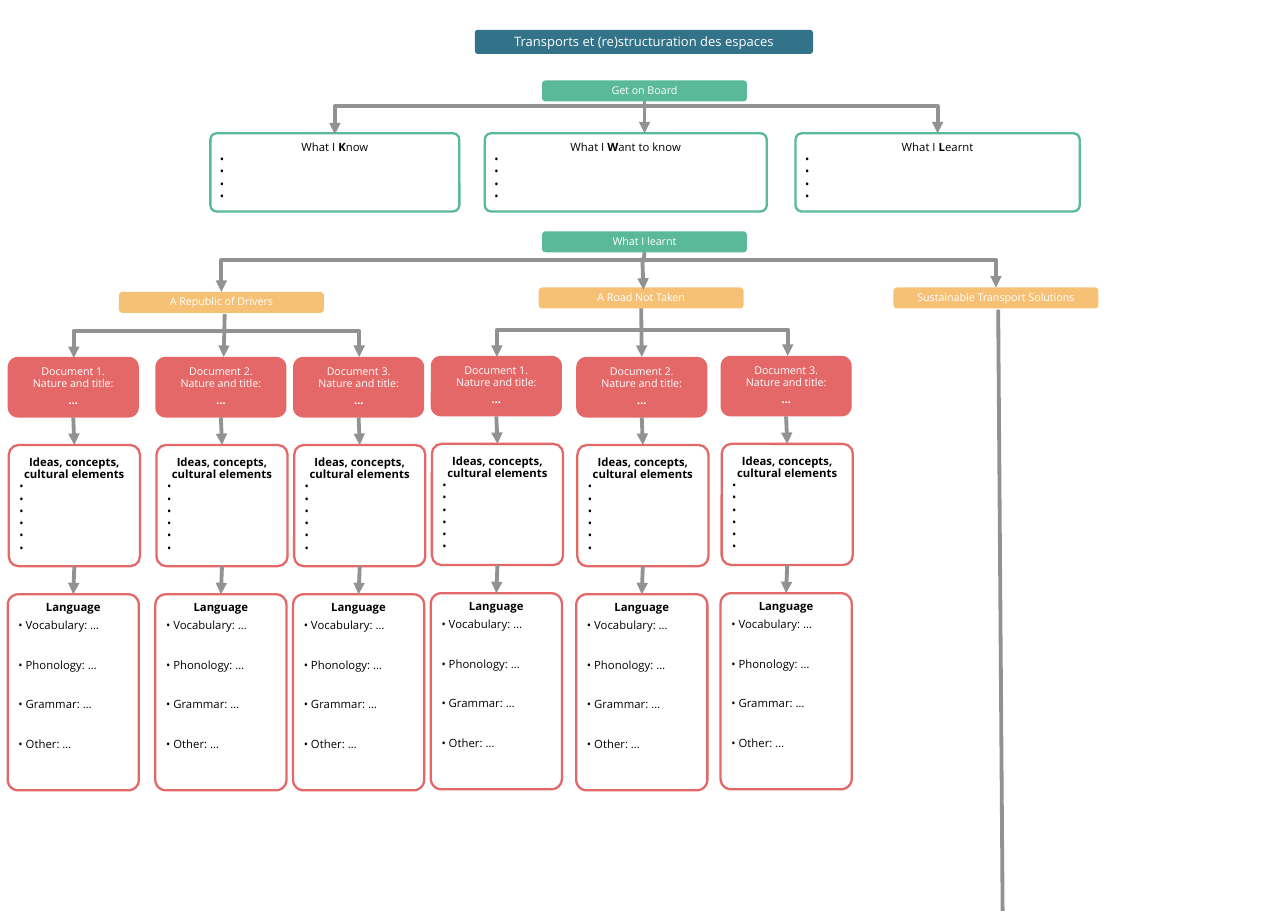
import lxml.etree
import pptx
import pptx.util
import pptx.dml.color
import pptx.enum.shapes
import pptx.enum.text
import pptx.oxml.ns

RGBColor = pptx.dml.color.RGBColor
BLUE = RGBColor(0x33, 0x73, 0x89)
GREEN = RGBColor(0x59, 0xB9, 0x98)
ORANGE = RGBColor(0xF7, 0xC1, 0x75)
RED = RGBColor(0xE4, 0x68, 0x68)
GREY = RGBColor(0x92, 0x92, 0x92)
WHITE = RGBColor(0xFF, 0xFF, 0xFF)
BLACK = RGBColor(0, 0, 0)

CENTER = pptx.enum.text.PP_ALIGN.CENTER
LEFT = pptx.enum.text.PP_ALIGN.LEFT
STRAIGHT = pptx.enum.shapes.MSO_CONNECTOR.STRAIGHT
ELBOW = pptx.enum.shapes.MSO_CONNECTOR.ELBOW
qn = pptx.oxml.ns.qn
SubElement = lxml.etree.SubElement

# The slide is a grid of 1169 columns by 827 rows
CELL = pptx.util.Inches(0.01)
TOP, BOTTOM = 0, 2

prs = pptx.Presentation()
prs.slide_width, prs.slide_height = 1169 * CELL, 827 * CELL
s = prs.slides.add_slide(prs.slide_layouts[6])


def box(x, y, w, h, fill=None, line=None, adj=None):
    sp = s.shapes.add_shape(pptx.enum.shapes.MSO_SHAPE.ROUNDED_RECTANGLE,
                            x * CELL, y * CELL, w * CELL, h * CELL)
    sp.shadow.inherit = False
    if adj:
        sp.adjustments[0] = adj
    if fill:
        sp.fill.solid()
        sp.fill.fore_color.rgb = fill
    else:
        sp.fill.background()
    if line:
        sp.line.color.rgb = line
        sp.line.width = pptx.util.Pt(1.5)
    else:
        sp.line.fill.background()
    tf = sp.text_frame
    tf.word_wrap = True
    tf.vertical_anchor = pptx.enum.text.MSO_ANCHOR.MIDDLE
    tf.margin_left = tf.margin_right = 7 * CELL
    tf.margin_top = tf.margin_bottom = 3 * CELL
    return sp


def write(sp, *parts, size=7.4, font="Open Sans", color=BLACK, align=LEFT,
          bold=None, before=0):
    """Add one paragraph; a line break follows each part but the last
    when it ends with a newline, and the part equal to bold is bold."""
    tf = sp.text_frame
    p = tf.paragraphs[0] if not tf.text else tf.add_paragraph()
    p.alignment = align
    p.line_spacing = 0.9
    p.space_before = pptx.util.Pt(before)
    for part in parts:
        r = p.add_run()
        r.text = part.rstrip("\n")
        r.font.size = pptx.util.Pt(size)
        r.font.name = font
        r.font.color.rgb = color
        r.font.bold = part == bold
        if part.endswith("\n"):
            p.add_line_break()
            SubElement(p._p[-1], qn("a:rPr"), sz=str(int(size * 100)))


# Title and headings
bars = {}
for text, x, y, w, h, size, fill, adj in [
    ("Transports et (re)structuration des espaces", 431, 27, 307, 22, 8.5, BLUE, 0.14),
    ("Get on Board", 492, 73, 186, 19, 7, GREEN, None),
    ("What I learnt", 492, 210, 186, 19, 7, GREEN, None),
    ("A Republic of Drivers", 108, 265, 186, 19, 7, ORANGE, None),
    ("A Road Not Taken", 489, 261, 186, 19, 7, ORANGE, None),
    ("Sustainable Transport Solutions", 811, 261, 186, 19, 7, ORANGE, None),
]:
    bars[text] = box(x, y, w, h, fill=fill, adj=adj)
    write(bars[text], text, size=size, color=WHITE, align=CENTER)

# Know, want to know, learnt
for x, w, initial, rest in [(191, 226, "K", "now"), (440, 256, "W", "ant to know"),
                            (722, 258, "L", "earnt")]:
    sp = box(x, 121, w, 71, line=GREEN, adj=0.08)
    write(sp, "What I ", initial, rest, align=CENTER, bold=initial)
    for _ in range(4):
        write(sp, "•")

# Straight lines: start, end, joined start, joined end, arrowheads
lines = [
    (585, 92, 585, 121, bars["Get on Board"], None, ["tailEnd"]),
    (584, 229, 584, 238, bars["What I learnt"], None, []),
    (583, 234, 584, 263, None, None, ["tailEnd"]),
    (906, 281, 910, 827, None, None, []),
    (204, 285, 203, 324, None, None, ["tailEnd"]),
]

# Document columns
for i, (x, y) in enumerate([(7, 324), (141, 324), (266, 324),
                            (391, 323), (523, 324), (654, 323)]):
    document = box(x, y, 119, 55, fill=RED)
    write(document, f"Document {i % 3 + 1}.\n", "Nature and title:",
          size=7, color=WHITE, align=CENTER)
    write(document, "…", size=11.2, font="Karla", color=WHITE, align=CENTER)

    ideas = box(x + 1, y + 80, 119, 110, line=RED, adj=0.08)
    title = "Ideas, concepts, cultural elements"
    write(ideas, title, align=CENTER, bold=title)
    for _ in range(6):
        write(ideas, "•")

    language = box(x, y + 215.5, 119, 178, line=RED, adj=0.08)
    language.text_frame.vertical_anchor = pptx.enum.text.MSO_ANCHOR.TOP
    language.text_frame.margin_top = 4 * CELL
    write(language, "Language", align=CENTER, bold="Language")
    for topic in ["Vocabulary", "Phonology", "Grammar", "Other"]:
        write(language, f"• {topic}: …", before=3.7 if topic == "Vocabulary" else 18)

    for upper, lower in [(document, ideas), (ideas, language)]:
        lines.append((0, 0, 0, 0, upper, lower, ["tailEnd"]))
    if i == 4:
        lines.append((0, 0, 0, 0, bars["A Road Not Taken"], document, ["tailEnd"]))

connectors = []
for x1, y1, x2, y2, upper, lower, heads in lines:
    c = s.shapes.add_connector(STRAIGHT, x1 * CELL, y1 * CELL, x2 * CELL, y2 * CELL)
    if upper:
        c.begin_connect(upper, BOTTOM)
    if lower:
        c.end_connect(lower, TOP)
    connectors.append((c, heads))

# Brackets: left, right, bar height, right tip, and how much lower the left tip is
for left, right, bar, tip, drop in [(304, 851, 96, 121, 1), (201, 904, 236, 261, 4),
                                    (67, 326, 300, 324, 1), (451, 715, 299, 323, 1)]:
    span = right - left
    x = (left + right - drop) / 2
    y = tip + (drop - span) / 2
    c = s.shapes.add_connector(ELBOW, int(x * CELL), int(y * CELL),
                               int((x + drop) * CELL), int((y + span) * CELL))
    spPr = c.element.spPr
    spPr.find(qn("a:xfrm")).set("rot", str(270 * 60000))
    rise = (tip + drop - bar) * 100000 // drop
    SubElement(spPr.find(qn("a:prstGeom")).find(qn("a:avLst")), qn("a:gd"),
               name="adj1", fmla=f"val {rise}")
    connectors.append((c, ["headEnd", "tailEnd"]))

for c, heads in connectors:
    c.line.color.rgb = GREY
    c.line.width = pptx.util.Pt(2.5)
    spPr = c.element.spPr
    for head in heads:
        SubElement(spPr.find(qn("a:ln")), qn(f"a:{head}"), type="triangle")
    SubElement(spPr, qn("a:effectLst"))

prs.save("out.pptx")
